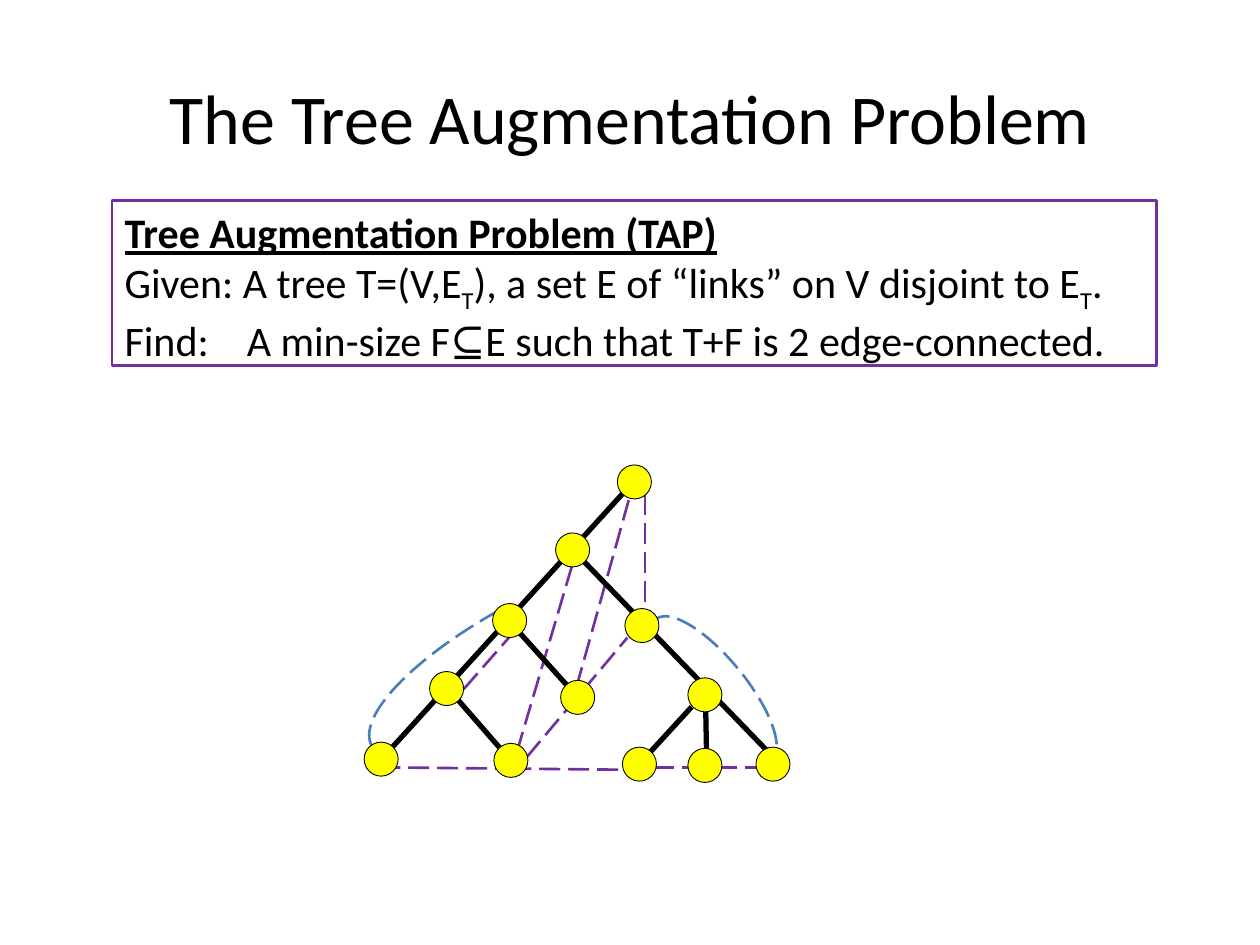
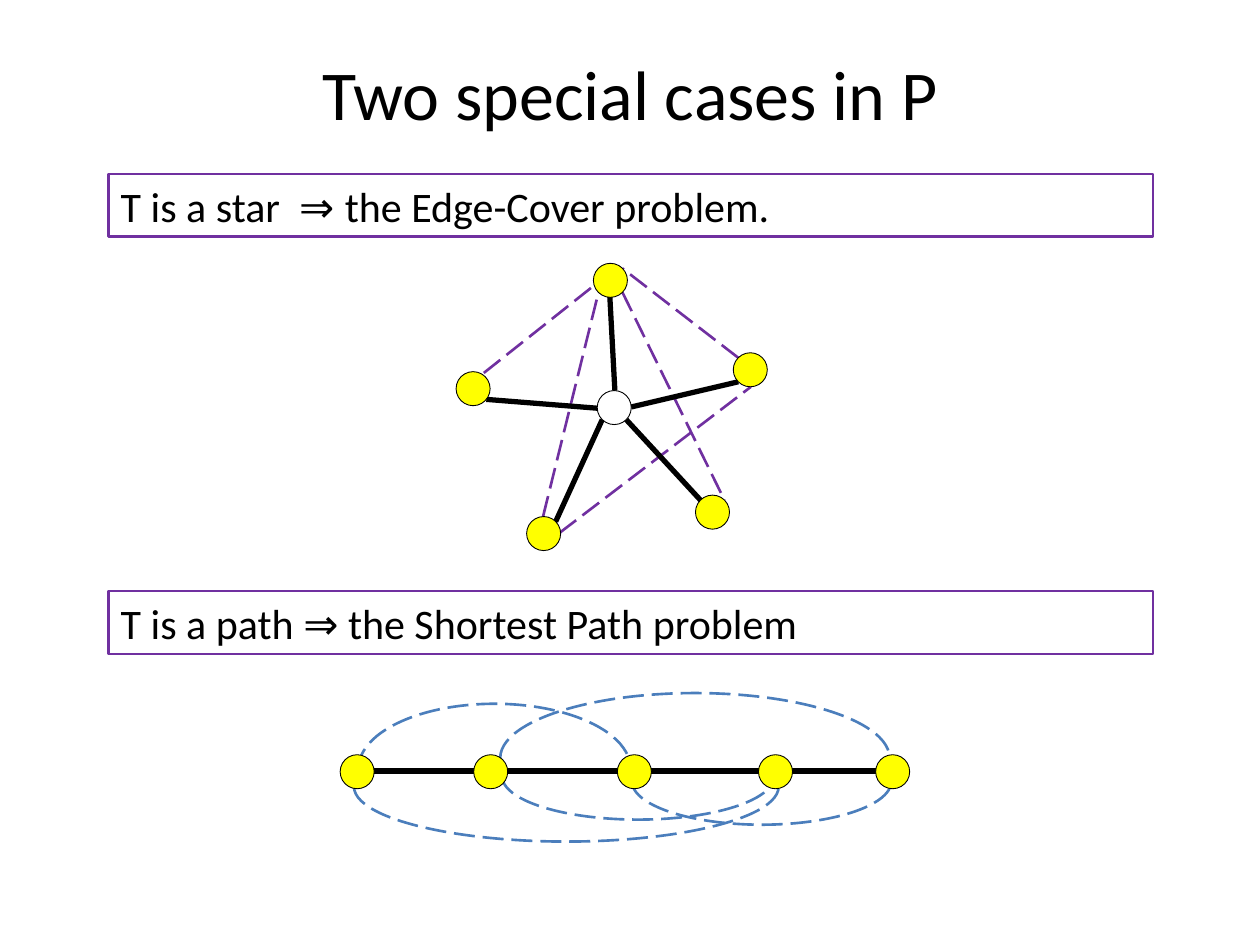
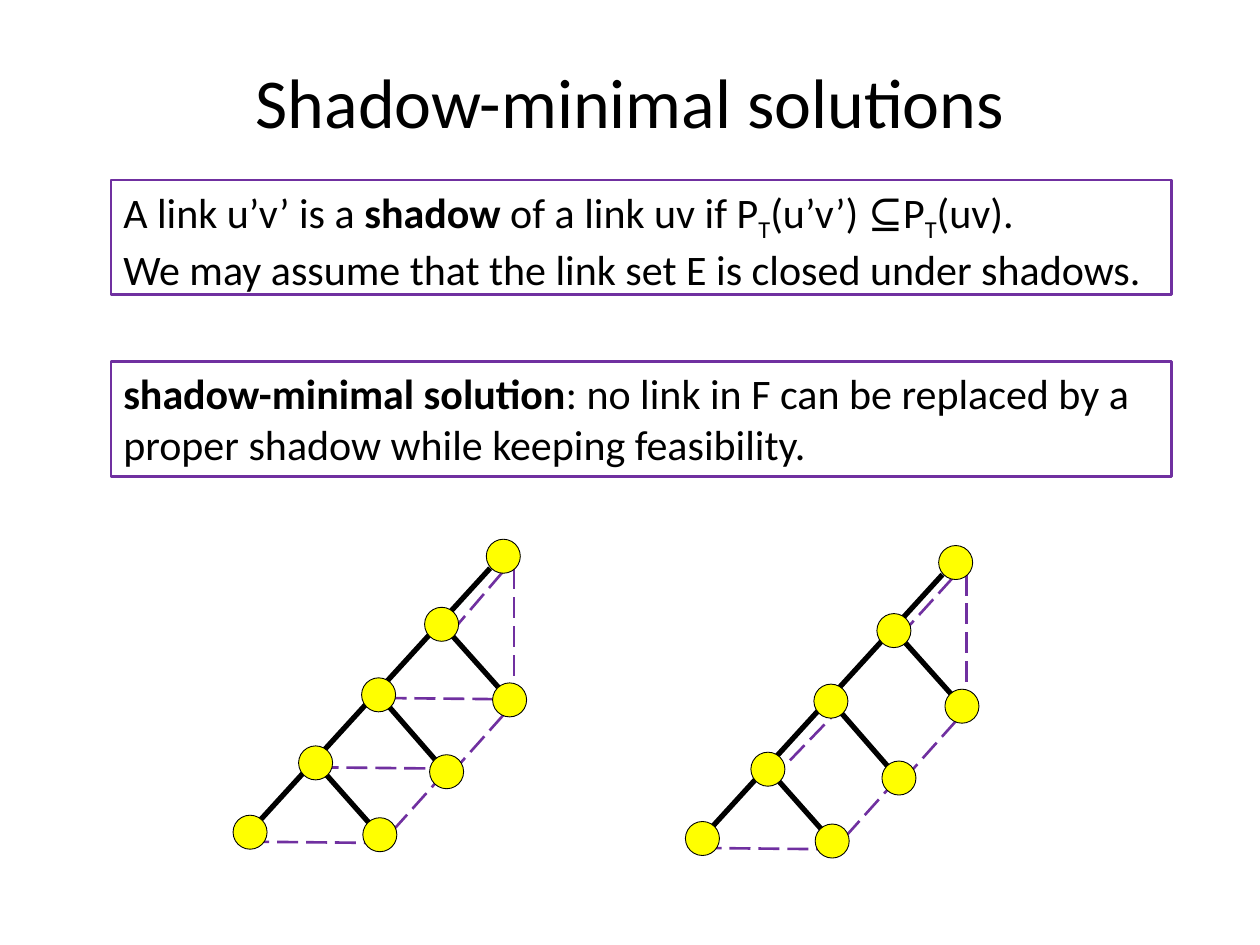
import pptx
import pptx.util
import pptx.dml.color
import pptx.enum.dml
import pptx.enum.shapes
import pptx.enum.text
import pptx.oxml.ns
import lxml.etree

Inches, Pt = pptx.util.Inches, pptx.util.Pt
MSO_SHAPE = pptx.enum.shapes.MSO_SHAPE
LONG_DASH = pptx.enum.dml.MSO_LINE.LONG_DASH
qn = pptx.oxml.ns.qn

THEME = {
    "black": "000000", "white": "FFFFFF", "node": "FFFF00",
    "link": "7030A0", "curve": "4B7EBC",
    "font": "Calibri", "title": 40, "body": 24,
    "thin": 0.5, "medium": 1.5, "thick": 3,
    "node_size": 0.27, "title_size": (9, 1.25), "tab": 0.97,
}

# ---- Content: text runs are plain strings or (text, format) pairs ----
BOLD = {"bold": True}
HEADING = {"bold": True, "underline": True}
SUB = {"baseline": "-25000"}
MATH = {"name": "Cambria"}
ARROW = {"name": "Roboto"}

# Links and edges are (x1, y1, x2, y2); nodes are (left, top)
TREE = {
    "links": [
        (5.58, 6.09, 5.17, 6.09), (4.05, 6.1, 5.05, 6.11), (3.01, 6.09, 4.01, 6.1),
        (4.99, 3.97, 4.59, 5.4), (4.54, 4.49, 4.09, 6.01), (6.08, 6.09, 5.67, 6.09),
        (5.12, 3.92, 5.12, 4.84), (4.18, 6.01, 4.98, 5.06), (3.68, 5.47, 4.04, 5.06)],
    "edges": [
        (5.6, 5.58, 5.61, 6.11), (3.57, 5.48, 4.11, 6.1), (5.49, 5.61, 5.05, 6.09),
        (4.94, 3.92, 3.06, 5.99), (4.05, 4.94, 4.6, 5.55), (4.58, 4.4, 6.09, 5.96)],
    # box, rotation, flipped, angles
    "arcs": [
        ((4.94, 5.22, 1.45, 0.51), 50.7, False, (105.5, 0.64)),
        ((3.91, 3.53, 1.03, 3.3), 243.6, False, (162, 200.02))],
    "nodes": [
        (4.9, 3.69), (4.41, 4.23), (3.91, 4.79), (4.96, 4.83), (3.41, 5.33),
        (4.45, 5.4), (5.46, 5.38), (2.89, 5.89), (3.92, 5.9), (4.94, 5.93),
        (5.46, 5.94), (6, 5.93)],
}

STAR = {
    "links": [
        (4.94, 2.32, 5.75, 3.97), (3.84, 2.96, 4.71, 2.27), (4.31, 4.1, 4.75, 2.32),
        (5.86, 2.84, 4.94, 2.13), (4.44, 4.23, 5.96, 3.07)],
    "edges": [
        (4.84, 2.35, 4.88, 3.1), (5.86, 3.03, 5.01, 3.23), (4.97, 3.33, 5.56, 3.97),
        (4.78, 3.33, 4.41, 4.14), (4.74, 3.24, 3.86, 3.17)],
    "nodes": [(4.18, 4.1), (3.62, 2.95), (4.71, 2.09), (5.82, 2.8), (5.52, 3.93)],
    "hubs": [(4.74, 3.1)],
}

HALF_ARC = (162, 56.75)
PATH = {
    "edges": [(7.08, 6.12, 2.77, 6.12)],
    "arcs": [(box, 270, flipped, HALF_ARC) for box, flipped in [
        ((3.41, 5.02, 1.03, 2.16), False), ((5, 4.47, 1.03, 3.09), False),
        ((4.72, 5.08, 0.69, 2.16), True), ((4.06, 4.56, 0.87, 3.37), True),
        ((5.7, 5.17, 0.69, 2.06), True)]],
    "nodes": [(x, 5.99) for x in (2.7, 3.76, 4.9, 6.02, 6.95)],
}

COMB_EDGES = [
    (2.52, 6.07, 3.07, 6.69), (3.89, 4.51, 2.01, 6.57),
    (3.01, 5.52, 3.55, 6.14), (3.54, 4.99, 3.96, 5.46)]
COMB_NODES = [
    (2.37, 5.92), (1.85, 6.47), (2.88, 6.49), (3.86, 4.28),
    (3.41, 5.99), (2.87, 5.38), (3.91, 5.42), (3.37, 4.82)]
COMB_LINKS = [
    (1.97, 6.68, 2.97, 6.69), (3.12, 6.59, 3.47, 6.2),
    (3.58, 6.14, 4.08, 5.58), (4.08, 4.51, 4.08, 5.43)]
COMB = {"edges": COMB_EDGES, "nodes": COMB_NODES}
ALL_LINKS = COMB | {"links": COMB_LINKS + [
    (3.99, 4.54, 3.63, 4.96), (3.06, 5.54, 4.05, 5.55), (2.52, 6.09, 3.52, 6.1)]}
MINIMAL_LINKS = COMB | {"shift": (3.59, 0.05), "links": COMB_LINKS + [
    (3.55, 5, 4.05, 4.45), (2.52, 6.15, 3.06, 5.59)]}

SLIDES = [
    {"title": "The Tree Augmentation Problem", "title_top": 0.3,
     "boxes": [((0.89, 1.59, 8.29, 1.31), [
         [("Tree Augmentation Problem (TAP)", HEADING)],
         ["Given: A tree T=(V,E", ("T", SUB),
          "), a set E of “links” on V disjoint to E", ("T", SUB), "."],
         ["Find:\tA min-size F", ("⊆", MATH),
          "E such that T+F is 2 edge-connected."]])],
     "graphs": [TREE]},
    {"title": "Two special cases in P", "title_top": 0.11,
     "boxes": [
         ((0.86, 1.38, 8.29, 0.5),
          [["T is a star  ", ("⇒ ", ARROW), "the Edge-Cover problem."]]),
         ((0.86, 4.69, 8.29, 0.5),
          [["T is a path ", ("⇒", ARROW), " the Shortest Path problem"]])],
     "graphs": [STAR, PATH]},
    {"title": "Shadow-minimal solutions", "title_top": 0.17,
     "boxes": [
         ((0.88, 1.43, 8.42, 0.91), [
             ["A link u’v’ is a ", ("shadow", BOLD), " of a link uv if P", ("T", SUB),
              "(u’v’) ", ("⊆", MATH), "P", ("T", SUB), "(uv)."],
             ["We may assume that the link set E is closed under shadows."]]),
         ((0.88, 2.87, 8.42, 0.91), [
             [("shadow-minimal solution", BOLD),
              ": no link in F can be replaced by a proper shadow while keeping feasibility."]])],
     "graphs": [ALL_LINKS, MINIMAL_LINKS]},
]


# ---- Formatting helpers ----
def rgb(name):
    return pptx.dml.color.RGBColor.from_string(THEME[name])


def set_line(sp, color, width, dash=None):
    sp.line.color.rgb = rgb(color)
    sp.line.width = Pt(THEME[width])
    if dash:
        sp.line.dash_style = dash


def add_run(p, text, size, **extra):
    r = p.add_run()
    r.text = text
    r.font.color.rgb = rgb("black")
    baseline = extra.pop("baseline", None)
    for key, value in ({"name": THEME["font"], "size": Pt(THEME[size])} | extra).items():
        setattr(r.font, key, value)
    if baseline:
        r._r.get_or_add_rPr().set("baseline", baseline)


def add_tab_stop(p):
    tabs = lxml.etree.SubElement(p._p.get_or_add_pPr(), qn("a:tabLst"))
    lxml.etree.SubElement(tabs, qn("a:tab"), pos=str(Inches(THEME["tab"])), algn="l")


# ---- Slide parts ----
def add_title(s, text, top):
    sp = s.shapes.title
    width, height = THEME["title_size"]
    for key, value in {"left": 0.5, "top": top, "width": width, "height": height}.items():
        setattr(sp, key, Inches(value))
    tf = sp.text_frame
    tf.vertical_anchor = pptx.enum.text.MSO_ANCHOR.MIDDLE
    p = tf.paragraphs[0]
    p.alignment = pptx.enum.text.PP_ALIGN.CENTER
    add_run(p, text, "title")


def add_box(s, box, paragraphs):
    sp = s.shapes.add_textbox(*map(Inches, box))
    set_line(sp, "link", "medium")
    tf = sp.text_frame
    tf.word_wrap = True
    tf.auto_size = pptx.enum.text.MSO_AUTO_SIZE.SHAPE_TO_FIT_TEXT
    for i, runs in enumerate(paragraphs):
        p = tf.add_paragraph() if i else tf.paragraphs[0]
        for run in runs:
            text, extra = (run, {}) if isinstance(run, str) else run
            if "\t" in text:
                add_tab_stop(p)
            add_run(p, text, "body", **extra)


def add_segment(s, ends, shift, *style):
    dx, dy = shift
    x1, y1, x2, y2 = ends
    line = s.shapes.add_connector(
        pptx.enum.shapes.MSO_CONNECTOR.STRAIGHT,
        *map(Inches, (x1 + dx, y1 + dy, x2 + dx, y2 + dy)))
    set_line(line, *style)
    lxml.etree.SubElement(line._element.spPr, qn("a:effectLst"))


def add_arc(s, box, rotation, flipped, angles):
    sp = s.shapes.add_shape(MSO_SHAPE.ARC, *map(Inches, box))
    sp.shadow.inherit = False
    sp.fill.background()
    set_line(sp, "curve", "medium", LONG_DASH)
    sp.rotation = rotation
    for i, angle in enumerate(angles):
        sp.adjustments[i] = angle
    if flipped:
        sp._element.spPr.get_or_add_xfrm().set("flipH", "1")


def add_node(s, corner, shift, fill):
    left, top = (c + d for c, d in zip(corner, shift))
    size = THEME["node_size"]
    sp = s.shapes.add_shape(MSO_SHAPE.OVAL, *map(Inches, (left, top, size, size)))
    sp.shadow.inherit = False
    sp.fill.solid()
    sp.fill.fore_color.rgb = rgb(fill)
    set_line(sp, "black", "thin")


def add_graph(s, graph):
    shift = graph.get("shift", (0, 0))
    for ends in graph.get("links", []):
        add_segment(s, ends, shift, "link", "medium", LONG_DASH)
    for ends in graph["edges"]:
        add_segment(s, ends, shift, "black", "thick")
    for arc in graph.get("arcs", []):
        add_arc(s, *arc)
    for kind, fill in (("nodes", "node"), ("hubs", "white")):
        for corner in graph.get(kind, []):
            add_node(s, corner, shift, fill)


def main():
    prs = pptx.Presentation()
    prs.slide_width, prs.slide_height = Inches(10), Inches(7.5)
    for content in SLIDES:
        s = prs.slides.add_slide(prs.slide_layouts[5])
        add_title(s, content["title"], content["title_top"])
        for box, paragraphs in content["boxes"]:
            add_box(s, box, paragraphs)
        for graph in content["graphs"]:
            add_graph(s, graph)
    prs.save("out.pptx")


if __name__ == "__main__":
    main()
